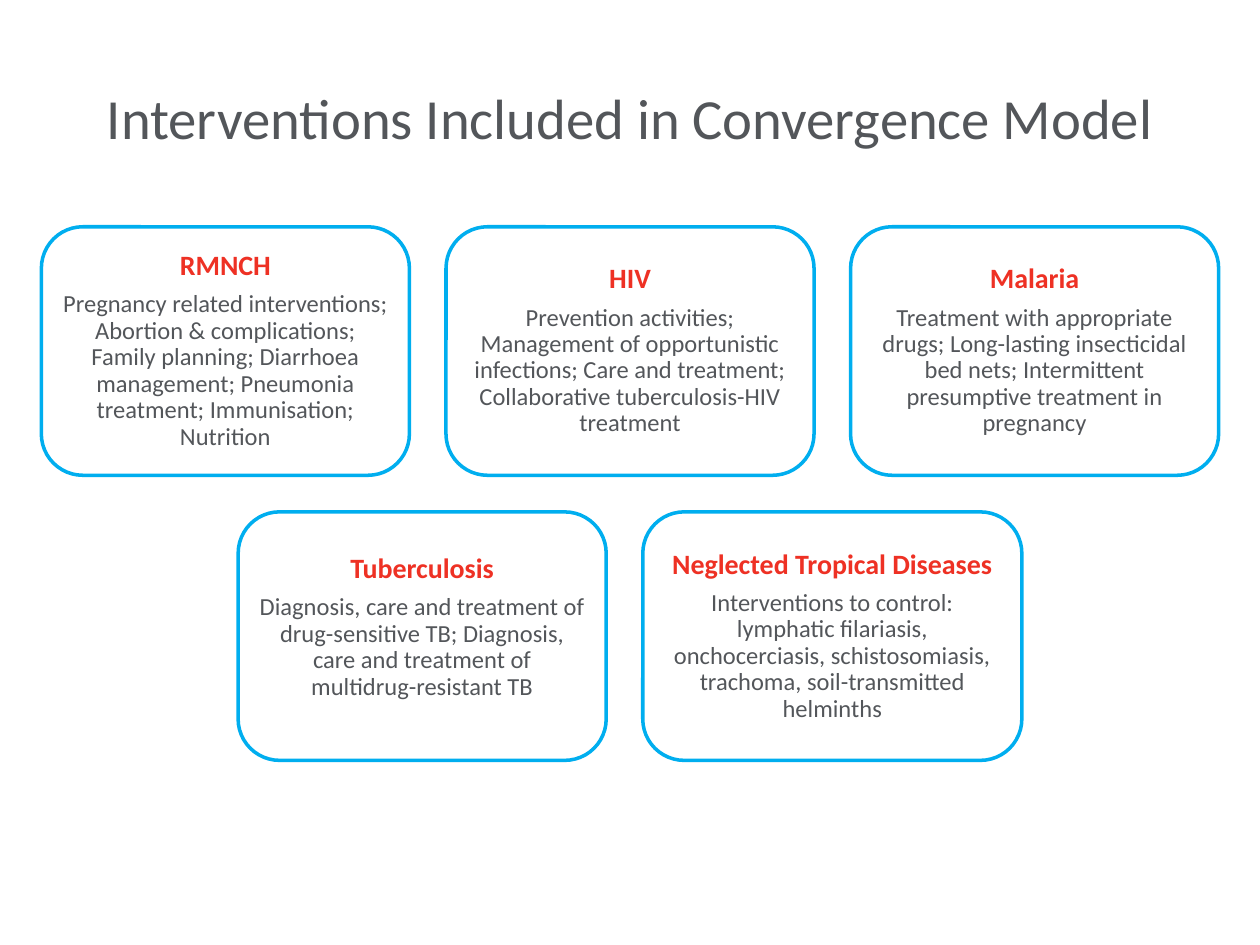
from pptx import Presentation
from pptx.dml.color import RGBColor
from pptx.enum.shapes import MSO_SHAPE as Shape
from pptx.enum.text import MSO_ANCHOR as Anchor, PP_ALIGN as Align
from pptx.util import Pt

WHITE = RGBColor(0xFF, 0xFF, 0xFF)
BLUE = RGBColor(0x00, 0xAE, 0xEF)
RED = RGBColor(0xEE, 0x31, 0x24)
GREY = RGBColor(0x53, 0x56, 0x5A)
FONT = "Calibri"

SLIDE_WIDTH, SLIDE_HEIGHT = 720, 540
CARD_WIDTH, WIDE_CARD_WIDTH, CARD_HEIGHT = 210.3, 216.6, 142
GAP = 20.9
ROWS_TOP = 129.6
INSET = 5

ROWS = [
    [
        ("RMNCH", "Pregnancy related interventions; Abortion & complications; "
         "Family planning; Diarrhoea management; Pneumonia treatment; "
         "Immunisation; Nutrition", CARD_WIDTH, INSET),
        ("HIV", "Prevention activities; Management of opportunistic infections; "
         "Care and treatment; Collaborative tuberculosis-HIV treatment",
         CARD_WIDTH, INSET),
        ("Malaria", "Treatment with appropriate drugs; Long-lasting insecticidal "
         "bed nets; Intermittent presumptive treatment in pregnancy",
         CARD_WIDTH, INSET),
    ],
    [
        ("Tuberculosis", "Diagnosis, care and treatment of drug-sensitive TB; "
         "Diagnosis, care and treatment of multidrug-resistant TB",
         CARD_WIDTH, 3 * INSET),
        ("Neglected Tropical Diseases", "Interventions to control: lymphatic "
         "filariasis, onchocerciasis, schistosomiasis, trachoma, "
         "soil-transmitted helminths", WIDE_CARD_WIDTH, INSET),
    ],
]


def write(paragraph, text, size, color, bold=False):
    paragraph.text = text
    paragraph.alignment = Align.CENTER
    font = paragraph.font
    font.name, font.size, font.bold = FONT, Pt(size), bold
    font.color.rgb = color


def add_title(slide, text, left, top, width, height):
    box = slide.shapes.add_textbox(Pt(left), Pt(top), Pt(width), Pt(height))
    frame = box.text_frame
    frame.word_wrap = True
    frame.vertical_anchor = Anchor.MIDDLE
    write(frame.paragraphs[0], text, 32.4, GREY)


def add_card(slide, heading, body, left, top, width, height, bottom_inset):
    card = slide.shapes.add_shape(
        Shape.ROUNDED_RECTANGLE, Pt(left), Pt(top), Pt(width), Pt(height))
    card.shadow.inherit = False
    card.fill.solid()
    card.fill.fore_color.rgb = WHITE
    card.line.color.rgb = BLUE
    card.line.width = Pt(2)
    frame = card.text_frame
    frame.word_wrap = True
    frame.vertical_anchor = Anchor.MIDDLE
    frame.margin_left = frame.margin_right = frame.margin_top = Pt(INSET)
    frame.margin_bottom = Pt(bottom_inset)
    title = frame.paragraphs[0]
    write(title, heading, 16, RED, bold=True)
    title.space_after = Pt(5.6)
    details = frame.add_paragraph()
    write(details, body, 14, GREY)
    title.line_spacing = details.line_spacing = 0.9


def add_card_row(slide, cards, left, top, width, height):
    row_width = sum(card[2] for card in cards) + GAP * (len(cards) - 1)
    card_left = left + (width - row_width) / 2
    for heading, body, card_width, bottom_inset in cards:
        add_card(slide, heading, body, card_left, top, card_width, height,
                 bottom_inset)
        card_left += card_width + GAP


def main():
    presentation = Presentation()
    presentation.slide_width = Pt(SLIDE_WIDTH)
    presentation.slide_height = Pt(SLIDE_HEIGHT)
    slide = presentation.slides.add_slide(presentation.slide_layouts[6])
    add_title(slide, "Interventions Included in Convergence Model",
              36, 21.6, 648, 90)
    for index, cards in enumerate(ROWS):
        top = ROWS_TOP + index * (CARD_HEIGHT + GAP)
        add_card_row(slide, cards, 0, top, SLIDE_WIDTH, CARD_HEIGHT)
    presentation.save("out.pptx")


if __name__ == "__main__":
    main()
